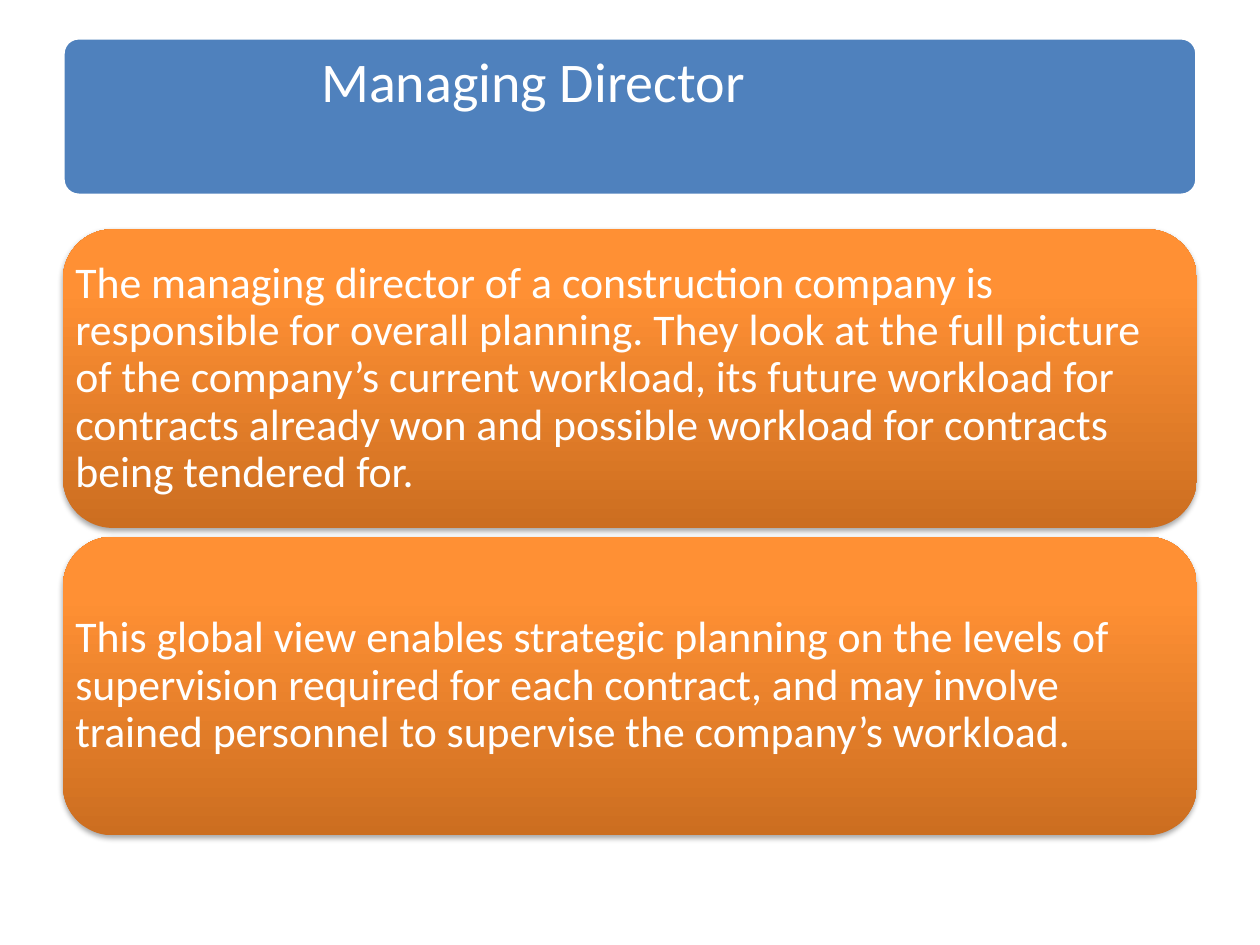
from lxml.etree import SubElement
from pptx import Presentation
from pptx.dml.color import RGBColor
from pptx.enum.shapes import MSO_SHAPE as Shape
from pptx.enum.text import MSO_ANCHOR as Anchor
from pptx.oxml.ns import qn
from pptx.util import Inches, Pt

DUTIES = [
    "The managing director of a construction company is responsible for overall "
    "planning. They look at the full picture of the company’s current workload, "
    "its future workload for contracts already won and possible workload for "
    "contracts being tendered for.",
    "This global view enables strategic planning on the levels of supervision "
    "required for each contract, and may involve trained personnel to supervise "
    "the company’s workload.",
]
ORANGE_STOPS = [(0, "CC6E20"), (80, "FF9034"), (100, "FF9136")]
LEFT, WIDTH = 0.5, 9
PANEL_TOP, PANEL_HEIGHT, PANEL_STEP = 1.82, 2.37, 2.44


def color(hex_value):
    """Turn a hex string into a colour."""
    return RGBColor.from_string(hex_value)


def add_rounded(slide, top, height):
    """Add a full-width rounded rectangle without a shadow."""
    box = slide.shapes.add_shape(
        Shape.ROUNDED_RECTANGLE, Inches(LEFT), Inches(top), Inches(WIDTH), Inches(height)
    )
    box.shadow.inherit = False
    return box


def add_text(slide, text, left, top, width, height, size, inset, anchor):
    """Add wrapped white text with equal insets on all sides."""
    label = slide.shapes.add_textbox(
        Inches(left), Inches(top), Inches(width), Inches(height)
    )
    frame = label.text_frame
    frame.word_wrap = True
    frame.vertical_anchor = anchor
    frame.margin_left = frame.margin_right = Inches(inset)
    frame.margin_top = frame.margin_bottom = Inches(inset)
    paragraph = frame.paragraphs[0]
    paragraph.text = text
    paragraph.line_spacing = 0.9
    paragraph.font.name = "Calibri"
    paragraph.font.size = Pt(size)
    paragraph.font.color.rgb = color("FFFFFF")


def fill_gradient(box, stops):
    """Fill a shape with a gradient that runs from bottom to top."""
    box.fill.gradient()
    box.fill.gradient_angle = 90
    stop_list = box.element.spPr.find(".//" + qn("a:gsLst"))
    for old_stop in list(stop_list):
        stop_list.remove(old_stop)
    for percent, hex_value in stops:
        stop = SubElement(stop_list, qn("a:gs"), pos=str(percent * 1000))
        SubElement(stop, qn("a:srgbClr"), val=hex_value)


def add_soft_shadow(box):
    """Give a shape a soft black shadow below it."""
    effects = box.element.spPr.find(qn("a:effectLst"))
    shadow = SubElement(
        effects, qn("a:outerShdw"), blurRad=str(Pt(3.1)), dist=str(Pt(1.8)),
        dir="5400000", rotWithShape="0",
    )
    black = SubElement(shadow, qn("a:srgbClr"), val="000000")
    SubElement(black, qn("a:alpha"), val="35000")


def add_title(slide, title):
    """Add the blue title banner."""
    top, height = 0.3, 1.25
    banner = add_rounded(slide, top, height)
    banner.adjustments[0] = 0.1
    banner.fill.solid()
    banner.fill.fore_color.rgb = color("4F81BD")
    banner.line.color.rgb = color("FFFFFF")
    banner.line.width = Pt(2)
    add_text(slide, title, 2.42, top, 7.07, height, 32, 0.13, Anchor.TOP)


def add_panel(slide, duty, top):
    """Add an orange panel that describes one duty."""
    panel = add_rounded(slide, top, PANEL_HEIGHT)
    fill_gradient(panel, ORANGE_STOPS)
    panel.line.fill.background()
    add_soft_shadow(panel)
    add_text(slide, duty, LEFT, top, WIDTH, PANEL_HEIGHT, 25, 0.1, Anchor.MIDDLE)


def main():
    """Build and save the slide."""
    deck = Presentation()
    deck.slide_width, deck.slide_height = Inches(10), Inches(7.5)
    slide = deck.slides.add_slide(deck.slide_layouts[6])
    add_title(slide, "Managing Director")
    for index, duty in enumerate(DUTIES):
        add_panel(slide, duty, PANEL_TOP + index * PANEL_STEP)
    deck.save("out.pptx")


if __name__ == "__main__":
    main()
